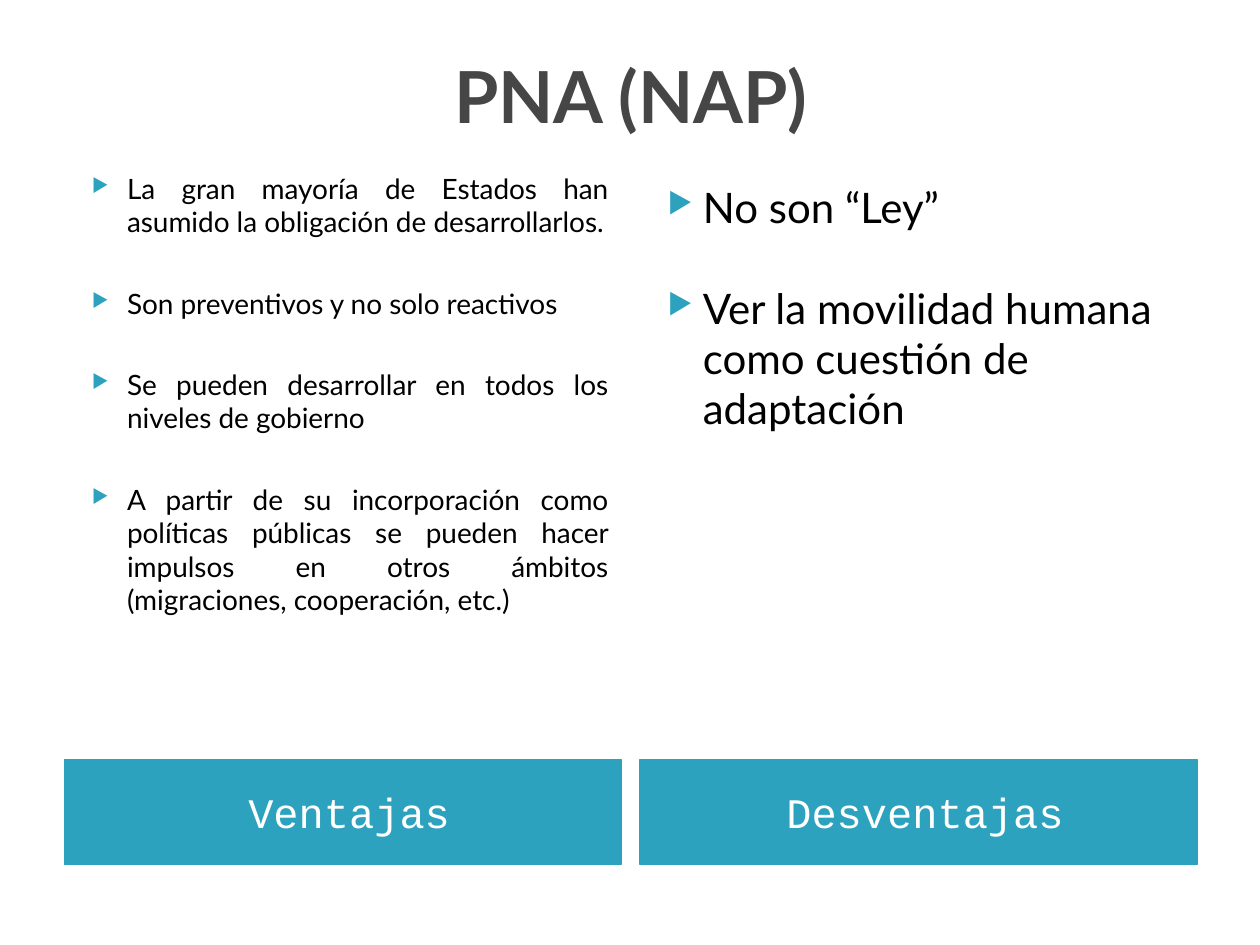
from dataclasses import dataclass

from lxml.etree import SubElement
from pptx import Presentation
from pptx.dml.color import RGBColor
from pptx.enum.shapes import MSO_SHAPE
from pptx.enum.text import MSO_ANCHOR as Anchor, PP_ALIGN as Align
from pptx.oxml.ns import qn
from pptx.util import Inches, Pt


@dataclass(frozen=True)
class Theme:
    accent = RGBColor(0x2D, 0xA2, 0xBF)
    heading = RGBColor(0x46, 0x46, 0x46)
    ink = RGBColor(0, 0, 0)
    light = RGBColor(255, 255, 255)
    sans = "Lato"
    mono = "Courier New"
    title_size = 41
    large_size = 24
    small_size = 16


THEME = Theme()

# Two-column grid, in inches
LEFT, COLUMN, GUTTER = 0.51, 4.42, 0.15
BODY_HEIGHT = 4.31
BANNER_TOP, BANNER_HEIGHT = 6.03, 0.83

ADVANTAGES = [
    "La gran mayoría de Estados han asumido la obligación de desarrollarlos.",
    "Son preventivos y no solo reactivos",
    "Se pueden desarrollar en todos los niveles de gobierno",
    "A partir de su incorporación como políticas públicas se pueden hacer "
    "impulsos en otros ámbitos (migraciones, cooperación, etc.)",
]
DRAWBACKS = ["No son “Ley”", "Ver la movilidad humana como cuestión de adaptación"]


def column_box(column, top, height):
    """Left, top, width and height of a box in a grid column."""
    left = LEFT + column * (COLUMN + GUTTER)
    return [Inches(value) for value in (left, top, COLUMN, height)]


def add_span(para, text, font, size, color, bold=False):
    span = para.add_run()
    span.text = text
    span.font.name = font
    span.font.size = Pt(size)
    span.font.bold = bold
    span.font.color.rgb = color


def add_bullet(para):
    """Hanging accent-coloured triangle."""
    props = para._p.get_or_add_pPr()
    props.set("marL", str(Inches(0.4)))
    props.set("indent", str(Inches(-0.28)))
    color = SubElement(props, qn("a:buClr"))
    SubElement(color, qn("a:srgbClr"), val=str(THEME.accent))
    SubElement(props, qn("a:buSzPct"), val="68000")
    SubElement(props, qn("a:buChar"), char="▶")


def set_title(page, text):
    title = page.shapes.title
    title.left, title.top = Inches(LEFT), Inches(0.13)
    title.width, title.height = Inches(9), Inches(1.25)
    frame = title.text_frame
    frame.vertical_anchor = Anchor.MIDDLE
    para = frame.paragraphs[0]
    para.alignment = Align.CENTER
    add_span(para, text, THEME.sans, THEME.title_size, THEME.heading, bold=True)


def add_list(page, column, top, items, size, gap, align):
    box = page.shapes.add_textbox(*column_box(column, top, BODY_HEIGHT))
    frame = box.text_frame
    frame.word_wrap = True
    for index, item in enumerate(items):
        para = frame.add_paragraph() if index else frame.paragraphs[0]
        add_bullet(para)
        para.alignment = align
        if index:
            para.space_before = Pt(gap)
        add_span(para, item, THEME.sans, size, THEME.ink)


def add_banner(page, column, text):
    box = page.shapes.add_shape(
        MSO_SHAPE.RECTANGLE, *column_box(column, BANNER_TOP, BANNER_HEIGHT))
    box.shadow.inherit = False
    box.fill.solid()
    box.fill.fore_color.rgb = THEME.accent
    box.line.color.rgb = THEME.accent
    box.line.width = Pt(0.75)
    frame = box.text_frame
    frame.word_wrap = True
    frame.vertical_anchor = Anchor.MIDDLE
    frame.margin_left = Inches(0.2)
    para = frame.paragraphs[0]
    para.alignment = Align.CENTER
    add_span(para, text, THEME.mono, THEME.large_size, THEME.light)


def main():
    deck = Presentation()
    deck.slide_width, deck.slide_height = Inches(10), Inches(7.5)
    page = deck.slides.add_slide(deck.slide_layouts[5])

    set_title(page, "PNA (NAP)")

    # Column labels along the bottom
    for column, label in enumerate(("Ventajas", "Desventajas")):
        add_banner(page, column, label)

    # Arguments above each label
    add_list(page, 0, 1.31, ADVANTAGES, THEME.small_size, 27.2, Align.JUSTIFY)
    add_list(page, 1, 1.39, DRAWBACKS, THEME.large_size, 28.8, Align.LEFT)

    deck.save("out.pptx")


if __name__ == "__main__":
    main()
